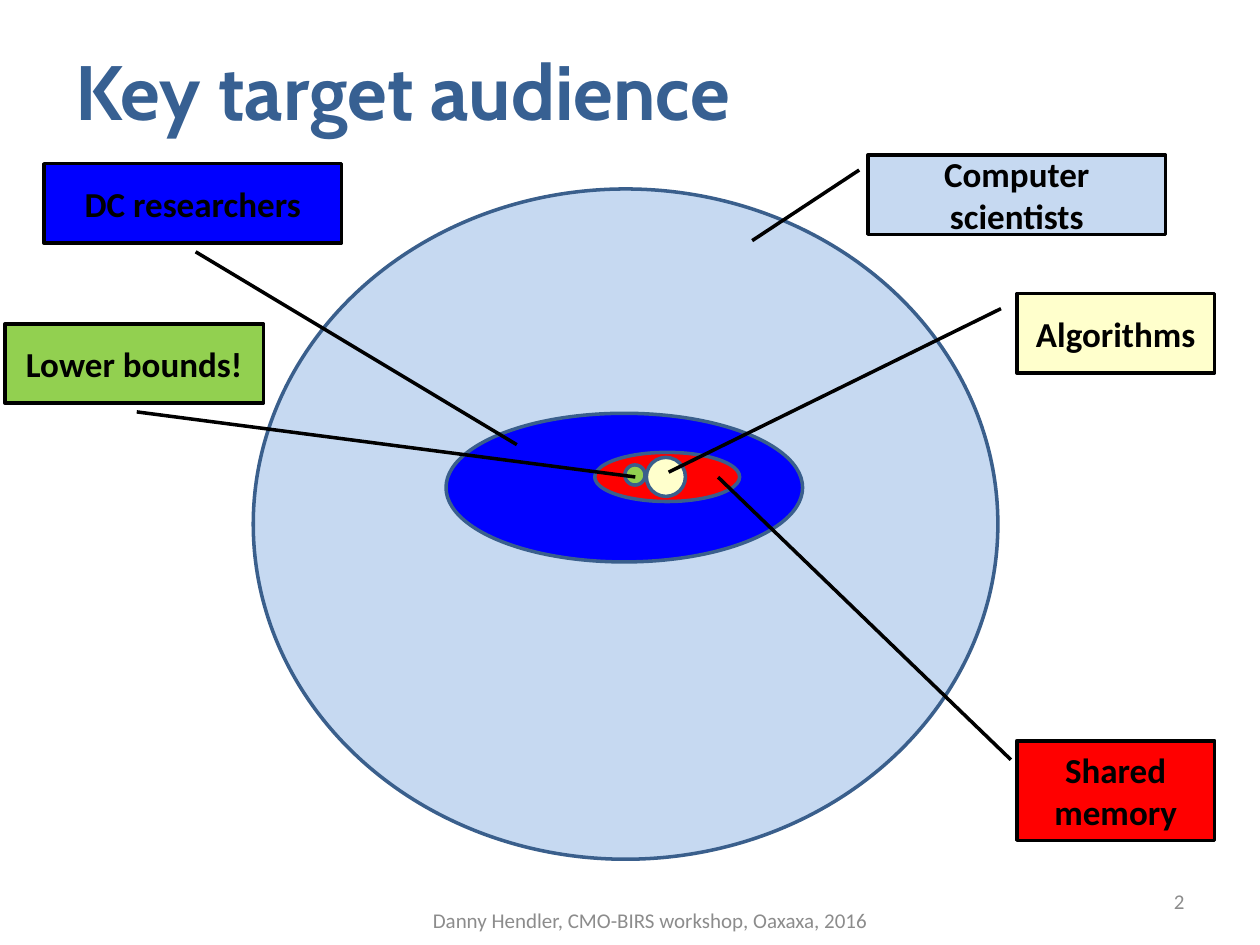
from pptx import Presentation
from pptx.dml.color import RGBColor
from pptx.enum.shapes import MSO_SHAPE
from pptx.enum.text import MSO_ANCHOR, PP_ALIGN
from pptx.util import Inches, Pt

THEME = {
    "title": ("Cabin", 44, "376092", True),
    "label": ("Calibri", 20, "000000", True),
    "foot": ("Calibri", 12, "8C8C8C", False),
    "ring": "3A5F8C",
    "edge": "000000",
    "line": 2,
}

deck = Presentation()
deck.slide_width, deck.slide_height = Inches(10), Inches(7.5)
slide = deck.slides.add_slide(deck.slide_layouts[6])


def area(x, y, w, h):
    """Turn percentages of the slide's width and height into lengths."""
    across, down = deck.slide_width / 100, deck.slide_height / 100
    return int(x * across), int(y * down), int(w * across), int(h * down)


def write(shape, text, style, align, anchor=MSO_ANCHOR.MIDDLE):
    frame = shape.text_frame
    frame.word_wrap = True
    frame.vertical_anchor = anchor
    para = frame.paragraphs[0]
    para.text, para.alignment = text, align
    font = para.font
    font.name, size, color, font.bold = THEME[style]
    font.size = Pt(size)
    font.color.rgb = RGBColor.from_string(color)


# Boxes are percentages of the slide
texts = [
    ("2", "foot", (71.7, 92.67, 23.3, 5.33), PP_ALIGN.RIGHT, MSO_ANCHOR.MIDDLE),
    ("Key target audience", "title", (5, 4, 84.4, 16), PP_ALIGN.LEFT, MSO_ANCHOR.TOP),
    ("Danny Hendler, CMO-BIRS workshop, Oaxaxa, 2016", "foot",
     (9.1, 94.67, 85, 5.33), PP_ALIGN.CENTER, MSO_ANCHOR.MIDDLE),
]
for text, style, box, align, anchor in texts:
    write(slide.shapes.add_textbox(*area(*box)), text, style, align, anchor)

# Label, fill, ellipse, callout box, pointer (y, x of start and end in box shares)
fields = [
    ("Computer scientists", "C6D9F1", (20.1, 20, 59.1, 70.93),
     (68.9, 16.4, 23.6, 8.4), (0.19, -0.03, 1.08, -0.39)),
    ("DC researchers", "0000FF", (35.4, 43.73, 28.3, 15.73),
     (3.5, 17.33, 23.6, 8.4), (1.11, 0.51, 3.54, 1.59)),
    ("Shared memory", "FF0000", (47.2, 47.87, 11.5, 5.2),
     (80.7, 78.4, 15.7, 10.53), (0.19, -0.03, -2.65, -1.51)),
    ("Algorithms", "FFFFCC", (51.3, 48.4, 3.1, 4.13),
     (80.7, 31.07, 15.7, 8.4), (0.19, -0.08, 2.25, -1.76)),
    ("Lower bounds!", "92D050", (49.6, 49.2, 1.6, 2.13),
     (0.4, 34.27, 20.5, 8.4), (1.11, 0.51, 1.93, 2.44)),
]
for label, fill, oval, box, points in fields:
    group = slide.shapes.add_group_shape()
    ring = group.shapes.add_shape(MSO_SHAPE.OVAL, *area(*oval))
    note = group.shapes.add_shape(MSO_SHAPE.LINE_CALLOUT_1, *area(*box))
    for i, point in enumerate(points):
        note.adjustments[i] = point
    for shape, edge in ((ring, "ring"), (note, "edge")):
        shape.shadow.inherit = False
        shape.fill.solid()
        shape.fill.fore_color.rgb = RGBColor.from_string(fill)
        shape.line.color.rgb = RGBColor.from_string(THEME[edge])
        shape.line.width = Pt(THEME["line"])
    write(note, label, "label", PP_ALIGN.CENTER)

deck.save("out.pptx")
